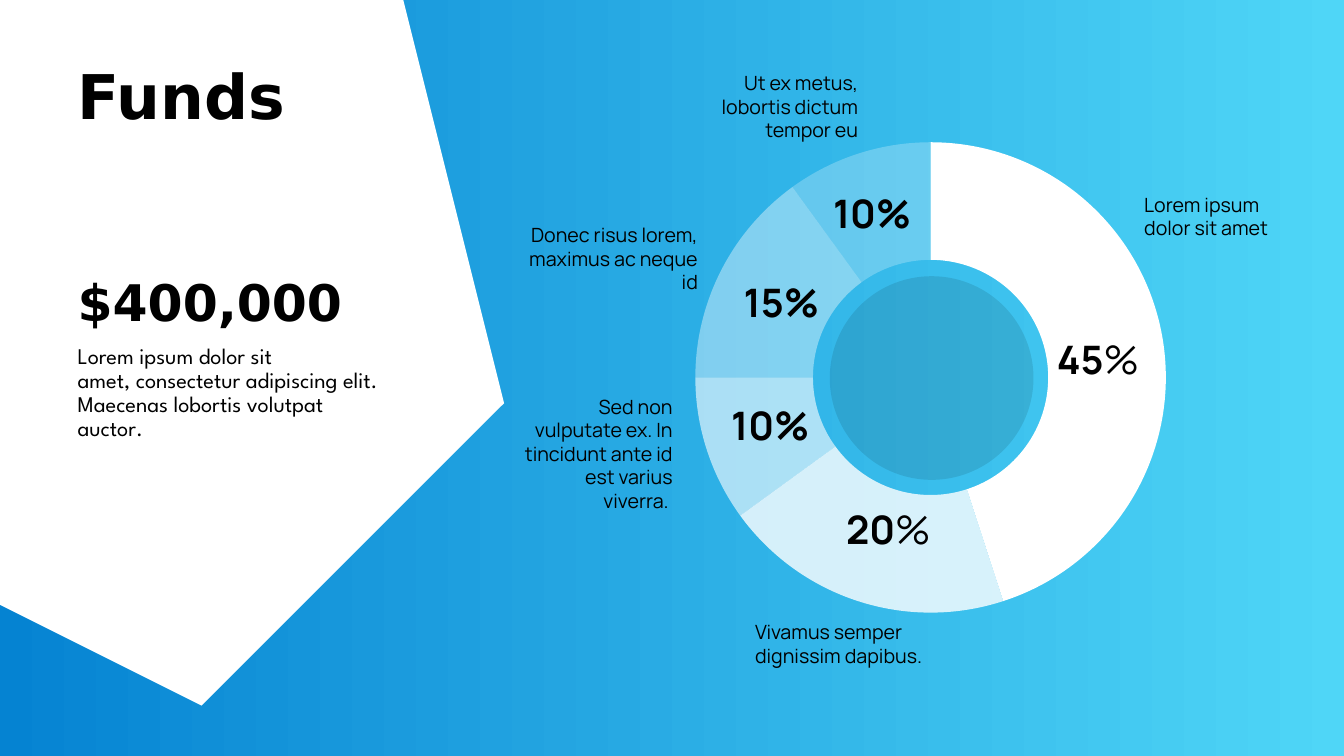
import pptx
import pptx.chart.data
import pptx.dml.color
import pptx.enum.chart
import pptx.enum.shapes
import pptx.enum.text
import pptx.util
from lxml import etree
from pptx.oxml.ns import qn

Inches = pptx.util.Inches
Pt = pptx.util.Pt
RGBColor = pptx.dml.color.RGBColor
ALIGN = pptx.enum.text.PP_ALIGN
ANCHOR = pptx.enum.text.MSO_ANCHOR
FIT = pptx.enum.text.MSO_AUTO_SIZE

BLUE = RGBColor(0x05, 0x83, 0xD2)
CYAN = RGBColor(0x4F, 0xD6, 0xF7)
WHITE = RGBColor(0xFF, 0xFF, 0xFF)
BLACK = RGBColor(0, 0, 0)


def add_run(para, text, font, size, bold=False):
    run = para.add_run()
    run.text = text
    run.font.name = font
    run.font.size = Pt(size)
    run.font.bold = bold
    run.font.color.rgb = BLACK


def set_fill(fill, color, alpha):
    """Fill with a colour at an opacity in percent."""
    fill.solid()
    fill.fore_color.rgb = color
    if alpha < 100:
        tint = fill._xPr.find(qn("a:solidFill"))[0]
        etree.SubElement(tint, qn("a:alpha")).set("val", str(alpha * 1000))


deck = pptx.Presentation()
deck.slide_width = Inches(13.33)
deck.slide_height = Inches(7.5)
slide = deck.slides.add_slide(deck.slide_layouts.get_by_name("Comparison"))

# Background
back = slide.background.fill
back.gradient()
back.gradient_angle = 0
for stop, color, place in zip(back.gradient_stops, (BLUE, CYAN), (0, 1)):
    stop.color.rgb = color
    stop.position = place

# White panel: each corner is a cubic curve of start, two handles and end
corners = [
    ((3.59, 0), (3.7, 0.08), (3.79, 0.2), (3.84, 0.34)),
    ((4.86, 3.54), (4.93, 3.76), (4.88, 4.01), (4.72, 4.18)),
    ((2.46, 6.67), (2.3, 6.84), (2.07, 6.92), (1.84, 6.87)),
]
STEPS = 16
points = []
for corner in corners:
    for step in range(STEPS + 1):
        t = step / STEPS
        parts = ((1 - t) ** 3, 3 * t * (1 - t) ** 2, 3 * t * t * (1 - t), t ** 3)
        points.append([sum(p * spot[axis] for p, spot in zip(parts, corner))
                       for axis in (0, 1)])
points.append((0, 6.47))
form = slide.shapes.build_freeform(0, 0, scale=Inches(1))
form.add_line_segments(points, close=True)
panel = form.convert_to_shape()
panel.shadow.inherit = False
set_fill(panel.fill, WHITE, 100)
panel.line.fill.background()
tree = slide.shapes._spTree
tree.remove(panel._element)
tree.insert(2, panel._element)

# Title and body text
holders = {holder.placeholder_format.idx: holder for holder in slide.placeholders}
for idx in (2, 4):
    tree.remove(holders[idx]._element)
texts = [
    (0, (0.67, 0.61, 3.61, 1.77), ANCHOR.TOP, "DejaVu Sans", 44, True, ["Funds"]),
    (1, (0.67, 3.37, 3.32, 1.91), ANCHOR.TOP, "League Spartan", 16, False,
     ["Lorem ipsum dolor sit",
      "amet, consectetur adipiscing elit. Maecenas lobortis volutpat auctor."]),
    (3, (0.67, 2.56, 3.32, 0.79), ANCHOR.BOTTOM, "DejaVu Sans", 36, True, ["$400,000"]),
]
for idx, box, anchor, font, size, bold, lines in texts:
    holder = holders[idx]
    holder.left, holder.top, holder.width, holder.height = map(Inches, box)
    frame = holder.text_frame
    frame.auto_size = FIT.NONE
    frame.word_wrap = True
    frame.vertical_anchor = anchor
    for num, line in enumerate(lines):
        para = frame.add_paragraph() if num else frame.paragraphs[0]
        para.alignment = ALIGN.LEFT
        para.line_spacing = 0.9
        para.space_before = Pt(0)
        add_run(para, line, font, size, bold)

# Ring chart
data = pptx.chart.data.CategoryChartData()
data.categories = ["1", "2", "3", "4", "5"]
data.add_series("Series 1", (45, 20, 10, 15, 10))
chart = slide.shapes.add_chart(
    pptx.enum.chart.XL_CHART_TYPE.DOUGHNUT,
    Inches(6.59), Inches(1.27), Inches(5.28), Inches(4.95), data).chart
chart.has_legend = False
chart.has_title = False
chart.font.name = "League Spartan"
chart.font.size = Pt(10)
chart.font.color.rgb = BLACK
plot = chart.plots[0]
plot.vary_by_categories = True
plot.has_data_labels = False
for num, alpha in enumerate((100, 80, 60, 40, 25)):
    slice_ = plot.series[0].points[num].format
    set_fill(slice_.fill, WHITE, alpha)
    slice_.line.fill.background()
plot._element.find(qn("c:holeSize")).set("val", "50")
area = plot._element.getparent()
for old in area.findall(qn("c:layout")):
    area.remove(old)
layout = etree.Element(qn("c:layout"))
area.insert(0, layout)
manual = etree.SubElement(layout, qn("c:manualLayout"))
for tag, val in (("layoutTarget", "inner"), ("xMode", "edge"), ("yMode", "edge"),
                 ("x", "0.058"), ("y", "0.028"), ("w", "0.884"), ("h", "0.944")):
    etree.SubElement(manual, qn("c:" + tag)).set("val", val)

# Centre disc
disc = slide.shapes.add_shape(pptx.enum.shapes.MSO_SHAPE.OVAL,
                              Inches(8.23), Inches(2.74), Inches(2.02), Inches(2.02))
disc.shadow.inherit = False
set_fill(disc.fill, BLACK, 10)
disc.line.fill.background()

# Shares and notes around the ring: box, alignment, size, (text, bold) runs
labels = [
    ((10.31, 3.28, 1.16, 0.57), ALIGN.CENTER, 28, [("45", True), ("%", False)]),
    ((8.23, 4.96, 1.16, 0.57), ALIGN.CENTER, 28, [("20", True), ("%", False)]),
    ((7.06, 3.93, 1.16, 0.57), ALIGN.CENTER, 28, [("10%", True)]),
    ((7.17, 2.71, 1.16, 0.57), ALIGN.CENTER, 28, [("15%", True)]),
    ((8.07, 1.83, 1.16, 0.57), ALIGN.CENTER, 28, [("10%", True)]),
    ((11.25, 1.86, 1.57, 0.57), ALIGN.LEFT, 14, [("Lorem ipsum dolor sit amet", False)]),
    ((5.05, 3.86, 1.72, 1.28), ALIGN.RIGHT, 14,
     [("Sed non vulputate ex. In tincidunt ante id est varius viverra. ", False)]),
    ((7.39, 6.1, 2.35, 0.57), ALIGN.LEFT, 14,
     [("Vivamus semper dignissim dapibus.", False)]),
    ((5.1, 2.16, 1.92, 0.81), ALIGN.RIGHT, 14,
     [("Donec risus lorem, maximus ac neque id", False)]),
    ((6.69, 0.65, 1.92, 0.81), ALIGN.RIGHT, 14,
     [("Ut ex metus, lobortis dictum tempor eu", False)]),
]
for box, align, size, runs in labels:
    frame = slide.shapes.add_textbox(*map(Inches, box)).text_frame
    frame.word_wrap = True
    frame.auto_size = FIT.SHAPE_TO_FIT_TEXT
    frame.vertical_anchor = ANCHOR.MIDDLE
    para = frame.paragraphs[0]
    para.alignment = align
    for text, bold in runs:
        add_run(para, text, "Manrope", size, bold)

deck.save("out.pptx")
